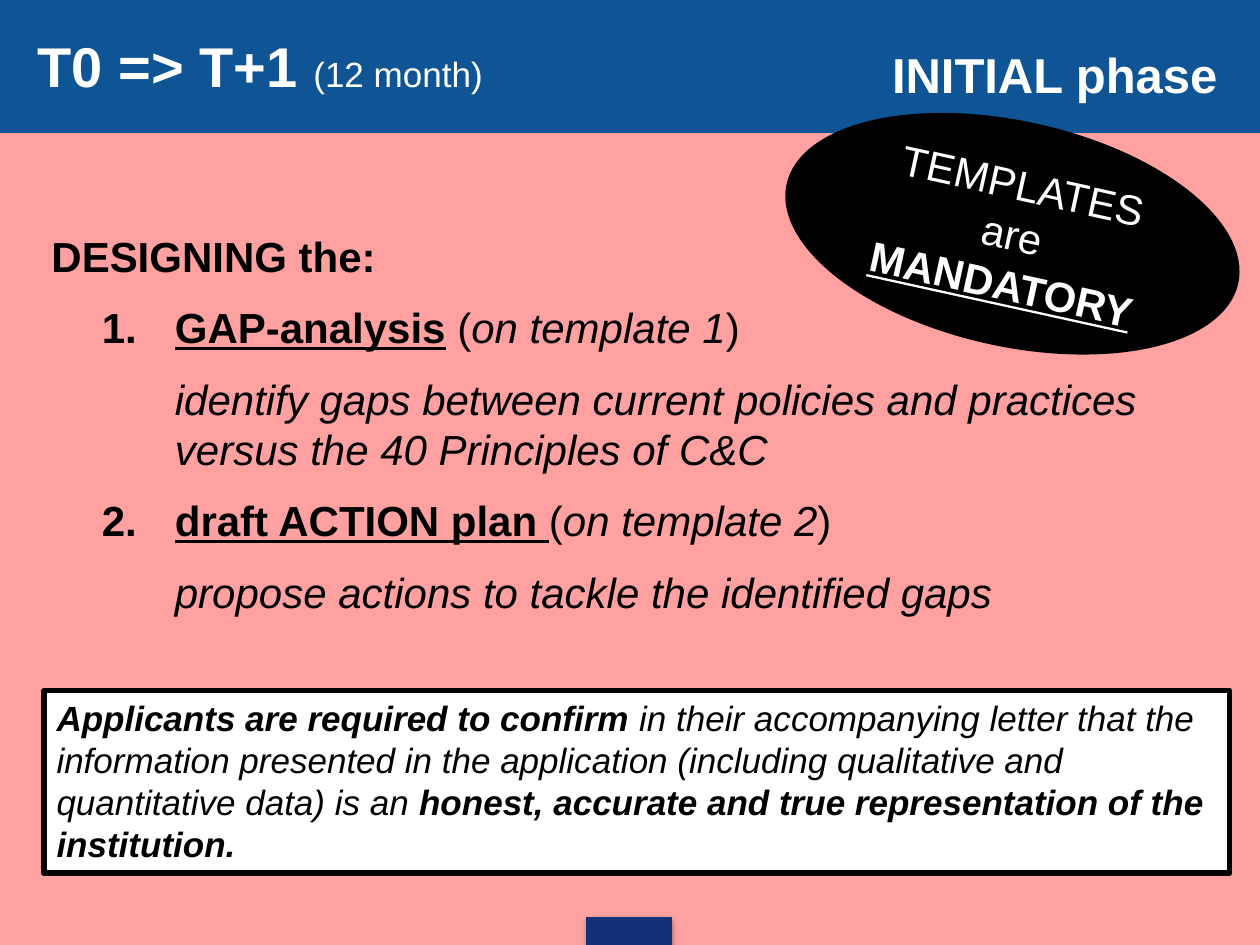
from dataclasses import dataclass
from typing import Optional

from lxml import etree
from pptx import Presentation
from pptx.dml.color import RGBColor
from pptx.enum.shapes import MSO_SHAPE
from pptx.enum.text import MSO_ANCHOR, PP_ALIGN
from pptx.oxml.ns import qn
from pptx.util import Inches, Pt

RECT, OVAL = MSO_SHAPE.RECTANGLE, MSO_SHAPE.OVAL
TOP, MIDDLE = MSO_ANCHOR.TOP, MSO_ANCHOR.MIDDLE
LEFT, CENTER, RIGHT = PP_ALIGN.LEFT, PP_ALIGN.CENTER, PP_ALIGN.RIGHT

COLORS = {
    "background": "FFA1A1",
    "header": "0F5494",
    "footer": "133176",
    "black": "000000",
    "white": "FFFFFF",
}
FONT = "Arial"


@dataclass
class Run:
    text: str
    bold: bool = False
    italic: bool = False
    underline: bool = False
    size: Optional[float] = None


@dataclass
class Para:
    runs: list[Run]
    indented: bool = False
    number: Optional[int] = None


@dataclass
class Box:
    left: float
    top: float
    width: float
    height: float


def rgb(name: str) -> RGBColor:
    return RGBColor.from_string(COLORS[name])


def add_shape(slide, kind, box: Box, fill: str, line: Optional[str] = None, weight: float = 0.75):
    sp = slide.shapes.add_shape(
        kind, Inches(box.left), Inches(box.top), Inches(box.width), Inches(box.height)
    )
    sp.shadow.inherit = False
    sp.fill.solid()
    sp.fill.fore_color.rgb = rgb(fill)
    if line:
        sp.line.color.rgb = rgb(line)
        sp.line.width = Pt(weight)
    else:
        sp.line.fill.background()
    return sp


def add_textbox(slide, box: Box):
    return slide.shapes.add_textbox(
        Inches(box.left), Inches(box.top), Inches(box.width), Inches(box.height)
    )


def set_indent(p, number: Optional[int]) -> None:
    pPr = p._p.get_or_add_pPr()
    pPr.set("marL", str(Inches(0.98)))
    pPr.set("indent", str(Inches(-0.58 if number else 0)))
    if number:
        etree.SubElement(pPr, qn("a:buFont"), typeface="+mj-lt")
        bullet = etree.SubElement(pPr, qn("a:buAutoNum"), type="arabicPeriod")
        if number > 1:
            bullet.set("startAt", str(number))


def write(sp, paras: list[Para], size: float, color: str, align=LEFT, anchor=TOP, gap: float = 0) -> None:
    tf = sp.text_frame
    tf.word_wrap = True
    tf.vertical_anchor = anchor
    for i, para in enumerate(paras):
        p = tf.add_paragraph() if i else tf.paragraphs[0]
        p.alignment = align
        if i and gap:
            p.space_before = Pt(gap)
        if para.indented:
            set_indent(p, para.number)
        for run in para.runs:
            r = p.add_run()
            r.text = run.text
            font = r.font
            font.name = FONT
            font.size = Pt(run.size or size)
            font.color.rgb = rgb(color)
            font.bold = run.bold
            font.italic = run.italic
            font.underline = run.underline


def add_shadow(sp) -> None:
    effects = sp._element.spPr.find(qn("a:effectLst"))
    shadow = etree.SubElement(
        effects, qn("a:outerShdw"), blurRad=str(Pt(3.1)), dist=str(Pt(1.8)),
        dir="5400000", rotWithShape="0",
    )
    color = etree.SubElement(shadow, qn("a:srgbClr"), val=COLORS["black"])
    etree.SubElement(color, qn("a:alpha"), val="35000")


def step(number: int, title: str, template: str, detail: str) -> list[Para]:
    heading = [
        Run(title, bold=True, underline=True),
        Run("(" if title.endswith(" ") else " ("),
        Run(template, italic=True),
        Run(")"),
    ]
    return [Para(heading, True, number), Para([Run(detail, italic=True)], True)]


def main() -> None:
    prs = Presentation()
    prs.slide_width, prs.slide_height = Inches(10), Inches(7.5)
    slide = prs.slides.add_slide(prs.slide_layouts[6])
    slide.background.fill.solid()
    slide.background.fill.fore_color.rgb = rgb("background")

    add_shape(slide, RECT, Box(0, 0, 10, 1.05), "header", "header")
    add_shadow(add_shape(slide, RECT, Box(4.66, 7.28, 0.67, 0.22), "footer", "footer"))

    phase = add_textbox(slide, Box(5.94, 0.28, 3.82, 0.62))
    write(phase, [Para([Run("INITIAL phase", bold=True)])], 28, "white", RIGHT, MIDDLE)

    design = add_textbox(slide, Box(0.31, 1.78, 9.45, 3.2))
    paras = [
        Para([Run("DESIGNING the:", bold=True)]),
        *step(1, "GAP-analysis", "on template 1",
              "identify gaps between current policies and practices versus the 40 Principles of C&C"),
        *step(2, "draft ACTION plan ", "on template 2",
              "propose actions to tackle the identified gaps"),
    ]
    write(design, paras, 24, "black", gap=12)

    badge = add_shape(slide, OVAL, Box(6.2, 0.96, 3.67, 1.79), "black")
    badge.rotation = 12.4
    lines = [Run("TEMPLATES"), Run("are"), Run("MANDATORY", bold=True, underline=True)]
    write(badge, [Para([line]) for line in lines], 24, "white", CENTER, MIDDLE)

    period = add_textbox(slide, Box(0.2, 0.21, 3.94, 0.62))
    write(period, [Para([Run("T0 => T+1 ", bold=True), Run("(12 month)", size=20)])],
          32, "white", anchor=MIDDLE)

    notice = add_shape(slide, RECT, Box(0.35, 5.48, 9.41, 1.45), "white", "black", 3)
    statement = [
        Run("Applicants are required to confirm ", bold=True, italic=True),
        Run("in their accompanying letter that the information presented in the application "
            "(including qualitative and quantitative data) is an ", italic=True),
        Run("honest, accurate and true representation of the institution.", bold=True, italic=True),
    ]
    write(notice, [Para(statement)], 20, "black")

    prs.save("out.pptx")


if __name__ == "__main__":
    main()
